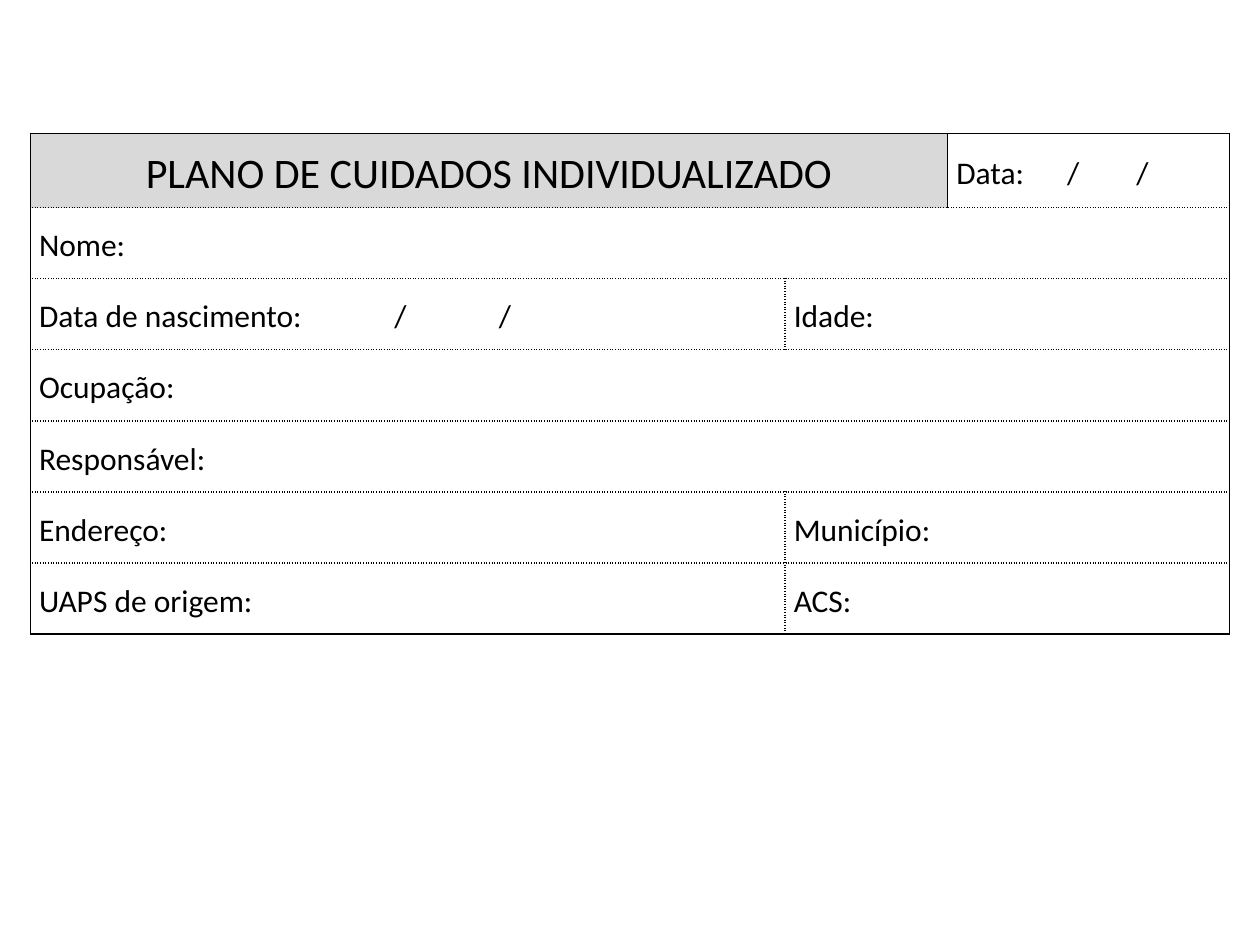
from dataclasses import dataclass

from lxml import etree
from pptx import Presentation
from pptx.dml.color import RGBColor
from pptx.enum.text import MSO_ANCHOR, PP_ALIGN
from pptx.oxml.ns import qn
from pptx.util import Inches, Pt

CENTER, LEFT, JUSTIFY = PP_ALIGN.CENTER, PP_ALIGN.LEFT, PP_ALIGN.JUSTIFY
MIDDLE = MSO_ANCHOR.MIDDLE
COLORS = {"ink": "000000", "paper": "FFFFFF", "heading": "D9D9D9"}
FONT = "Calibri"
SOLID, DOTTED = "solid", "sysDot"
SLIDE_WIDTH, SLIDE_HEIGHT = 10, 7.5
FORM_LEFT, FORM_TOP = 0.24, 1.06
COLUMN_WIDTHS = (5.99, 1.29, 2.24)
FORM_HEIGHT = 3.95


@dataclass(frozen=True)
class Field:
    """One form entry and the grid columns it covers."""
    label: str
    column: int = 0
    span: int = 3
    size: int = 18
    align: PP_ALIGN = JUSTIFY
    gap: int = 6
    fill: str = "paper"
    tabs: tuple[float, ...] = ()


FORM_ROWS = (
    (Field("PLANO DE CUIDADOS INDIVIDUALIZADO", span=2, size=24, align=CENTER,
           gap=0, fill="heading"),
     Field("Data:\t/\t/", 2, 1, align=LEFT, gap=0, tabs=(0.88, 1.43))),
    (Field("Nome:"),),
    (Field("Data de nascimento:\t/\t/", span=1, align=LEFT, tabs=(2.82, 3.65)),
     Field("Idade:", 1, 2)),
    (Field("Ocupação:"),),
    (Field("Responsável:"),),
    (Field("Endereço:", span=1), Field("Município:", 1, 2)),
    (Field("UAPS de origem:", span=1), Field("ACS:", 1, 2)),
)


def write_text(cell, text: str, *, size: int, align: PP_ALIGN, gap: int,
               tabs: tuple[float, ...]) -> None:
    """Write one formatted paragraph into a cell."""
    paragraph = cell.text_frame.paragraphs[0]
    paragraph.alignment = align
    paragraph.line_spacing = 1.15
    paragraph.space_before = paragraph.space_after = Pt(gap)
    if tabs:
        stops = etree.SubElement(paragraph._p.get_or_add_pPr(), qn("a:tabLst"))
        for position in tabs:
            etree.SubElement(stops, qn("a:tab"), pos=str(Inches(position)), algn="l")
    run = paragraph.add_run()
    run.text = text
    run.font.size = Pt(size)
    run.font.name = FONT
    run.font.color.rgb = RGBColor.from_string(COLORS["ink"])


def draw_borders(cell, dashes: dict[str, str]) -> None:
    """Draw one-point borders, given the dash of each side."""
    properties = cell._tc.get_or_add_tcPr()
    for position, (side, dash) in enumerate(dashes.items()):
        line = etree.Element(qn(f"a:ln{side}"), w=str(Pt(1)))
        ink = etree.SubElement(line, qn("a:solidFill"))
        etree.SubElement(ink, qn("a:srgbClr"), val=COLORS["ink"])
        etree.SubElement(line, qn("a:prstDash"), val=dash)
        properties.insert(position, line)


def draw_field(form, row: int, field: Field) -> None:
    """Merge, fill, border and label the cells of one field."""
    last_row, last_column = len(FORM_ROWS) - 1, len(COLUMN_WIDTHS) - 1
    end = field.column + field.span - 1
    divider = SOLID if row == 0 else DOTTED
    dashes = {
        "L": SOLID if field.column == 0 else divider,
        "R": SOLID if end == last_column else divider,
        "T": SOLID if row == 0 else DOTTED,
        "B": SOLID if row == last_row else DOTTED,
    }
    label_cell = form.cell(row, field.column)
    if field.span > 1:
        label_cell.merge(form.cell(row, end))
    for column in range(field.column, end + 1):
        cell = form.cell(row, column)
        cell.fill.solid()
        cell.fill.fore_color.rgb = RGBColor.from_string(COLORS[field.fill])
        hidden = {"L"} if column > field.column else set()
        draw_borders(cell, {side: dash for side, dash in dashes.items()
                            if side not in hidden})
    label_cell.vertical_anchor = MIDDLE
    label_cell.margin_left = label_cell.margin_right = Inches(0.07)
    label_cell.margin_top = label_cell.margin_bottom = Inches(0.06)
    write_text(label_cell, field.label, size=field.size, align=field.align,
               gap=field.gap, tabs=field.tabs)


def main() -> None:
    """Build the care plan form and save it."""
    deck = Presentation()
    deck.slide_width, deck.slide_height = Inches(SLIDE_WIDTH), Inches(SLIDE_HEIGHT)
    slide = deck.slides.add_slide(deck.slide_layouts[6])
    form = slide.shapes.add_table(
        len(FORM_ROWS), len(COLUMN_WIDTHS), Inches(FORM_LEFT), Inches(FORM_TOP),
        Inches(sum(COLUMN_WIDTHS)), Inches(FORM_HEIGHT)).table
    form.first_row = form.horz_banding = False
    for column, width in zip(form.columns, COLUMN_WIDTHS):
        column.width = Inches(width)
    for row, fields in enumerate(FORM_ROWS):
        for field in fields:
            draw_field(form, row, field)
    deck.save("out.pptx")


if __name__ == "__main__":
    main()
